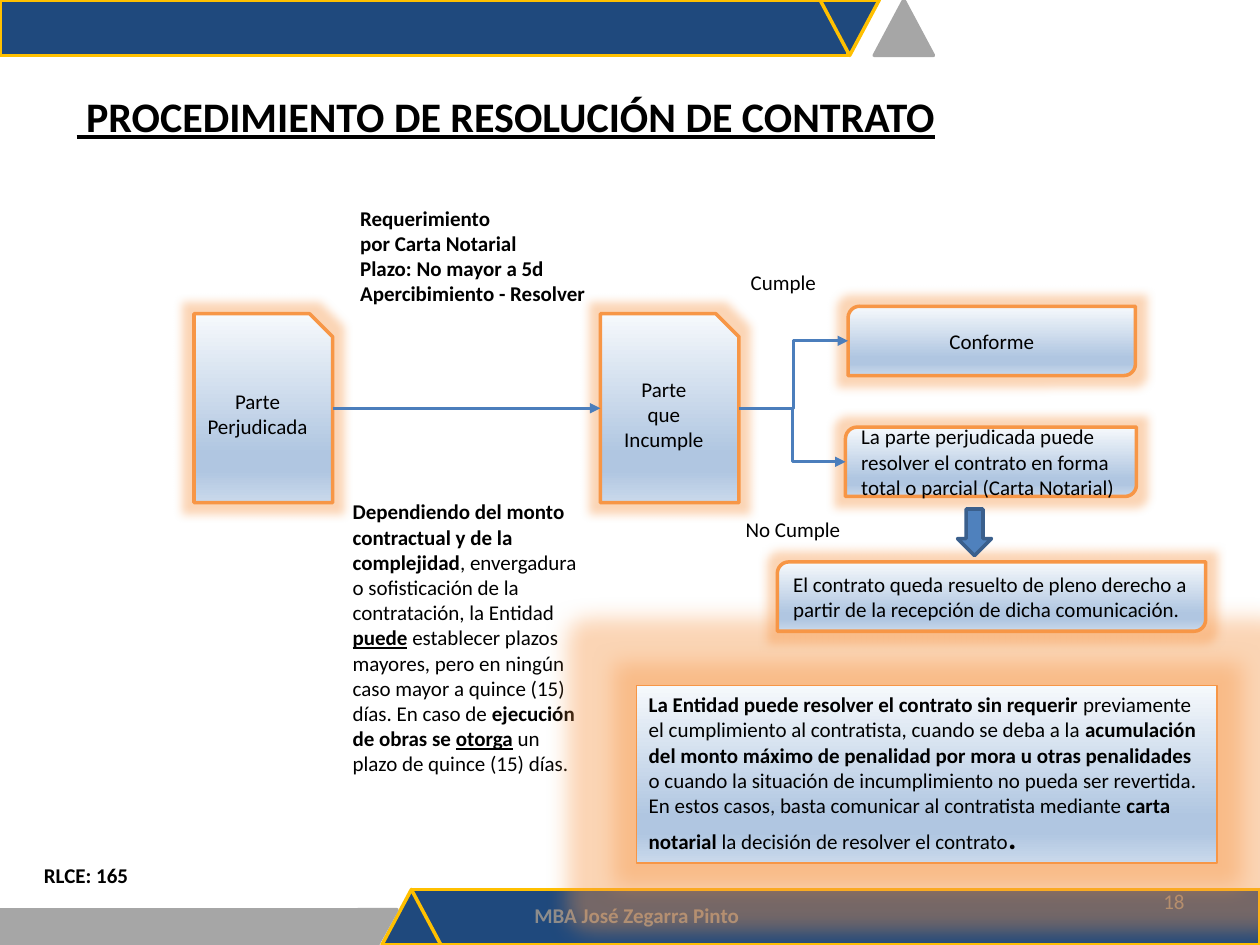
from lxml.etree import SubElement
from pptx import Presentation
from pptx.dml.color import RGBColor
from pptx.enum.shapes import MSO_CONNECTOR, MSO_SHAPE
from pptx.enum.text import MSO_ANCHOR, PP_ALIGN
from pptx.oxml.ns import qn
from pptx.util import Pt

HEX = {
    "navy": "1F497D", "gold": "FFC000", "gray": "A6A6A6", "black": "000000",
    "name": "8C8C8C", "page": "898989", "orange": "F79646", "link": "4B7EBC",
    "blue": "4F81BD", "edge": "3A5F8C",
    "pale": "F6F9FC", "mid": "B0C6E1", "soft": "CAD9EB",
}
STOPS = [(0, "pale"), (74, "mid"), (83, "mid"), (100, "soft")]
LEFT, CENTER, RIGHT = PP_ALIGN.LEFT, PP_ALIGN.CENTER, PP_ALIGN.RIGHT


def rgb(key):
    return RGBColor.from_string(HEX[key])


def write(shape, paras, align=LEFT, anchor=MSO_ANCHOR.TOP, color="black", wrap=True):
    """Each paragraph is a list of (text, style, size); style holds b and u."""
    frame = shape.text_frame
    frame.word_wrap = wrap
    frame.vertical_anchor = anchor
    for i, runs in enumerate(paras):
        para = frame.paragraphs[0] if i == 0 else frame.add_paragraph()
        para.alignment = align
        for text, style, size in runs:
            run = para.add_run()
            run.text = text
            font = run.font
            font.name, font.size = "Calibri", Pt(size)
            font.bold, font.underline = "b" in style, "u" in style
            font.color.rgb = rgb(color)


def lines(*texts, style="", size=12):
    return [[(text, style, size)] for text in texts]


def label(slide, box, paras, **opts):
    text = slide.shapes.add_textbox(*map(Pt, box))
    write(text, paras, **opts)
    return text


def solid(slide, kind, box, fill, edge, turn=0):
    shape = slide.shapes.add_shape(kind, *map(Pt, box))
    shape.shadow.inherit = False
    shape.fill.solid()
    shape.fill.fore_color.rgb = rgb(fill)
    shape.line.color.rgb = rgb(edge)
    shape.line.width = Pt(2)
    shape.rotation = turn
    return shape


def panel(slide, kind, box, paras, glow=11, width=2, anchor=MSO_ANCHOR.MIDDLE, align=LEFT):
    """Gradient box with an orange edge and glow."""
    shape = solid(slide, kind, box, "pale", "orange")
    shape.line.width = Pt(width)
    shape.fill.gradient()
    shape.fill.gradient_angle = 270
    props = shape._element.spPr
    stops = props.find(".//" + qn("a:gsLst"))
    for old in list(stops):
        stops.remove(old)
    for pos, key in STOPS:
        stop = SubElement(stops, qn("a:gs"), pos=str(pos * 1000))
        SubElement(stop, qn("a:srgbClr"), val=HEX[key])
    halo = SubElement(props.find(qn("a:effectLst")), qn("a:glow"), rad=str(Pt(glow)))
    tint = SubElement(halo, qn("a:srgbClr"), val=HEX["orange"])
    SubElement(tint, qn("a:alpha"), val="40000")
    write(shape, paras, align=align, anchor=anchor)
    return shape


def link(slide, kind, start, end):
    """Arrow from the right side of one box to the left side of another."""
    line = slide.shapes.add_connector(
        kind, start.left + start.width, start.top + start.height // 2,
        end.left, end.top + end.height // 2)
    line.line.color.rgb = rgb("link")
    line.line.width = Pt(1.75)
    SubElement(line.line._get_or_add_ln(), qn("a:tailEnd"), type="triangle")
    SubElement(line._element.spPr, qn("a:effectLst"))


def header(slide, x, y, w, h):
    tri = MSO_SHAPE.FLOWCHART_EXTRACT
    solid(slide, MSO_SHAPE.RECTANGLE, (x, y, w, h), "navy", "gold")
    solid(slide, tri, (x + w - 16, y, 33.8, h), "navy", "gold", 180)
    solid(slide, tri, (x + w + 15, y, 33.8, h), "gray", "gray")


def footer(slide, x, y, w, h):
    tri, bar = MSO_SHAPE.FLOWCHART_EXTRACT, MSO_SHAPE.RECTANGLE
    low, drop = 20.2, h - 20.2
    solid(slide, bar, (x + 235.4, y, w - 235.4, h), "navy", "gold")
    solid(slide, bar, (x, y + drop, 215.3, low), "gray", "gray")
    solid(slide, tri, (x + 218.2, y, 33.8, h), "navy", "gold")
    solid(slide, tri, (x + 204.5, y + drop, 22.3, low), "gray", "gray", 180)
    label(slide, (x + 249.8, y, 228.2, 28.8), lines("MBA José Zegarra Pinto", style="b"),
          align=CENTER, anchor=MSO_ANCHOR.MIDDLE, color="name")
    label(slide, (x + 516.2, y - 7.9, 167.8, 28.8), lines("18"),
          align=RIGHT, anchor=MSO_ANCHOR.MIDDLE, color="page")


def parties(slide, x, y, w, h):
    """Both parties, the demand between them and its terms; returns the second party."""
    wide, tall, top = 79.2, 108, y + 65.5
    snip = MSO_SHAPE.SNIP_1_RECTANGLE
    harmed = panel(slide, snip, (x, top, wide, tall),
                   lines("Parte", "Perjudicada"), align=CENTER)
    failed = panel(slide, snip, (x + w - wide, top, wide, tall),
                   lines("Parte", "que", "Incumple"), align=CENTER)
    label(slide, (x + 87.8, y, 144.7, 65.5),
          lines("Requerimiento", "por Carta Notarial", "Plazo: No mayor a 5d",
                "Apercibimiento - Resolver", style="b"), wrap=False)
    link(slide, MSO_CONNECTOR.STRAIGHT, harmed, failed)
    label(slide, (x + 83.5, y + h - 167, 144.7, 167), [[
        ("Dependiendo del monto contractual y de la complejidad", "b", 12),
        (", envergadura o sofisticación de la contratación, la Entidad ", "", 12),
        ("puede", "bu", 12),
        (" establecer plazos mayores, pero en ningún caso mayor a quince (15) días. "
         "En caso de ", "", 12),
        ("ejecución de obras se ", "b", 12),
        ("otorga", "bu", 12),
        (" ", "b", 12),
        ("un plazo de quince (15) días.", "", 12),
    ]])
    return failed


def note(slide, x, y, w, h):
    panel(slide, MSO_SHAPE.RECTANGLE, (x, y, w, h), [[
        ("La Entidad puede resolver el contrato sin requerir ", "b", 12),
        ("previamente el cumplimiento al contratista, cuando se deba a la ", "", 12),
        ("acumulación del monto máximo de penalidad por mora u otras penalidades ", "b", 12),
        ("o cuando la situación de incumplimiento no pueda ser revertida. En estos casos, "
         "basta comunicar al contratista mediante ", "", 12),
        ("carta notarial", "b", 12),
        (" la decisión de resolver el contrato", "", 12),
        (".", "b", 18),
    ]], glow=26, width=0.75, anchor=MSO_ANCHOR.TOP)


def outcomes(slide, x, y, w, h, source):
    """The two branches and what follows from the second."""
    leaf, tall = MSO_SHAPE.ROUND_2_DIAG_RECTANGLE, 39.6
    met = panel(slide, leaf, (x + 65.6, y + 24.5, 164.2, tall),
                lines("Conforme"), align=CENTER)
    unmet = panel(slide, leaf, (x + 64.1, y + 93.6, 166.3, tall), lines(
        "La parte perjudicada puede resolver el contrato en forma total o parcial "
        "(Carta Notarial)"))
    for end in (met, unmet):
        link(slide, MSO_CONNECTOR.ELBOW, source, end)
    panel(slide, leaf, (x + w - 244.8, y + h - tall, 244.8, tall), lines(
        "El contrato queda resuelto de pleno derecho a partir de la recepción de dicha "
        "comunicación."))
    solid(slide, MSO_SHAPE.DOWN_ARROW, (x + 128.2, y + 140.4, 19.4, 26.6), "blue", "edge")
    label(slide, (x + 2.9, y, 51.8, 21.6), lines("Cumple"), wrap=False)
    label(slide, (x, y + 141.1, 69.1, 21.6), lines("No Cumple"), wrap=False)


def main():
    deck = Presentation()
    deck.slide_width, deck.slide_height = Pt(720), Pt(540)
    slide = deck.slides.add_slide(deck.slide_layouts[6])
    header(slide, 0, 0, 484.6, 31.7)
    footer(slide, 0, 508.3, 720, 31.7)
    label(slide, (36.7, 48.2, 663.1, 36),
          lines(" PROCEDIMIENTO DE RESOLUCIÓN DE CONTRATO", style="bu", size=24))
    failed = parties(slide, 110.9, 113.8, 311.4, 334.7)
    note(slide, 363.6, 391.7, 331.9, 101.5)
    outcomes(slide, 419, 150.5, 270, 210.2, failed)
    label(slide, (18, 489.6, 63.4, 21.6), lines("RLCE: 165", style="b"), wrap=False)
    deck.save("out.pptx")


if __name__ == "__main__":
    main()
